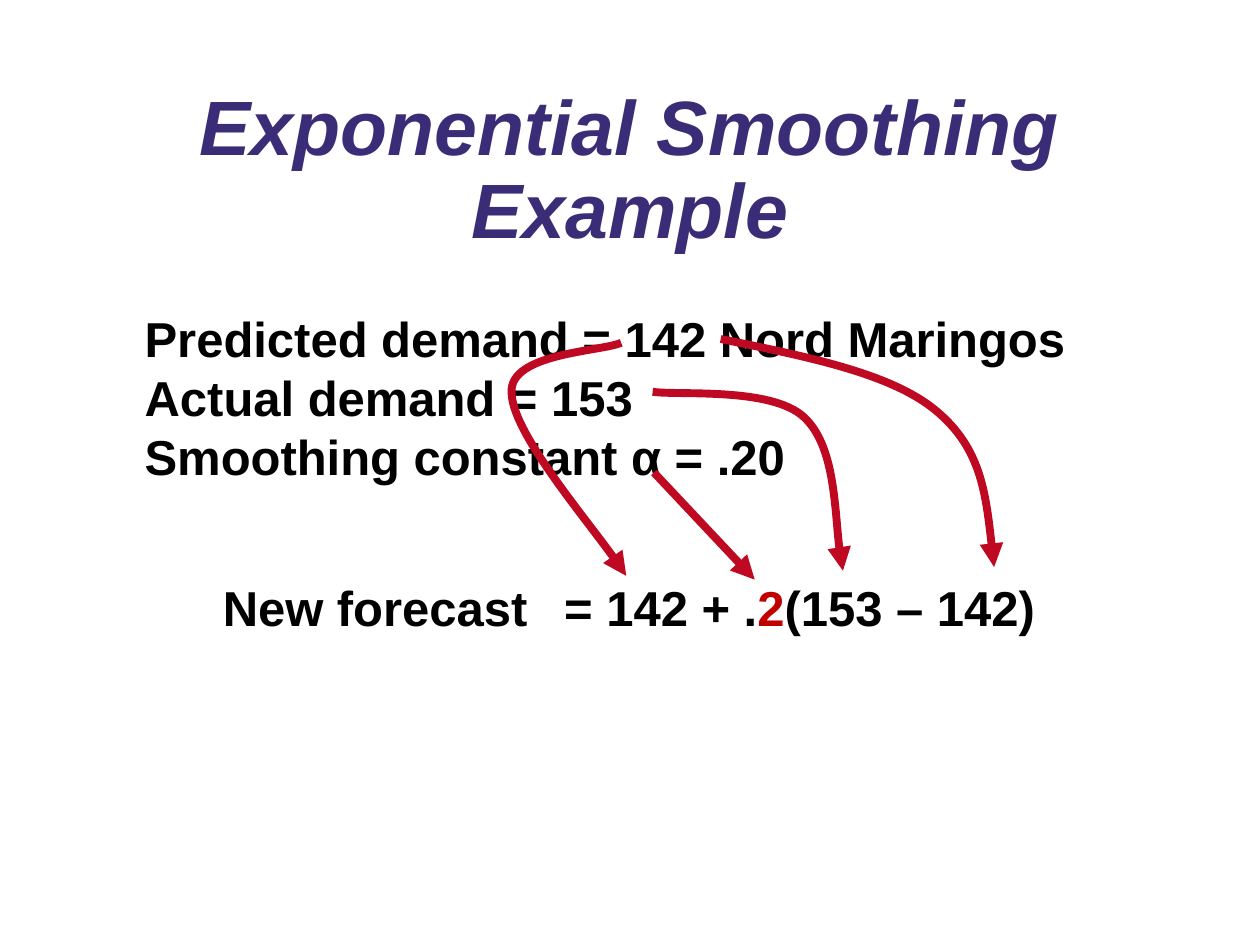
from lxml import etree
from pptx import Presentation
from pptx.dml.color import RGBColor
from pptx.enum import shapes, text
from pptx.oxml import ns
from pptx.util import Inches, Pt

COLORS = {"title": "3A2C76", "body": "000000", "accent": "C00000", "arrow": "BF0922"}


def style_font(font, size, color):
    font.name, font.size, font.bold = "Arial", Pt(size), True
    font.color.rgb = RGBColor.from_string(COLORS[color])


def style_arrow(arrow):
    """Red line with a triangle at its end and no shadow."""
    arrow.line.color.rgb = RGBColor.from_string(COLORS["arrow"])
    arrow.line.width = Pt(4.5)
    properties = arrow._element.spPr
    etree.SubElement(properties.get_or_add_ln(), ns.qn("a:tailEnd"), type="triangle")
    etree.SubElement(properties, ns.qn("a:effectLst"))


deck = Presentation()
deck.slide_width, deck.slide_height = Inches(10), Inches(7.5)
page = deck.slides.add_slide(deck.slide_layouts[5])

title = page.shapes.title
title.left, title.top = Inches(0.75), Inches(0.67)
title.width, title.height = Inches(8.5), Inches(1.39)
title.text_frame.text = "Exponential Smoothing Example"
title.text_frame.vertical_anchor = text.MSO_ANCHOR.MIDDLE
para = title.text_frame.paragraphs[0]
para.alignment = text.PP_ALIGN.CENTER
para.line_spacing = 0.9
style_font(para.font, 44, "title")
para.font.italic = True

# Given values
givens = page.shapes.add_textbox(Inches(1.05), Inches(2.4), Inches(7.57), Inches(1.5))
givens.text_frame.text = (
    "Predicted demand = 142 Nord Maringos\n"
    "Actual demand = 153\n"
    "Smoothing constant α = .20"
)
for para in givens.text_frame.paragraphs:
    style_font(para.font, 28, "body")

# Forecast formula
formula = page.shapes.add_textbox(Inches(1.67), Inches(4.42), Inches(6.66), Inches(1.27))
para = formula.text_frame.paragraphs[0]
para.line_spacing = 1.25
tabs = etree.SubElement(para._p.get_or_add_pPr(), ns.qn("a:tabLst"))
etree.SubElement(tabs, ns.qn("a:tab"), pos=str(Inches(2.71)), algn="l")
for words, color in (
    ("New forecast\t= 142 + .", "body"),
    ("2", "accent"),
    ("(153 – 142)", "body"),
):
    span = para.add_run()
    span.text = words
    style_font(span.font, 28, color)

# Curved arrows: a start point, then three points for each Bezier segment
curves = [
    [(5.72, 2.69), (6.4, 2.83), (7.07, 2.96), (7.43, 3.26),
     (7.79, 3.56), (7.84, 4.03), (7.89, 4.5)],
    [(5.18, 3.11), (5.38, 3.14), (6.12, 3.07), (6.38, 3.31),
     (6.63, 3.54), (6.63, 4.27), (6.69, 4.53)],
    [(4.93, 2.72), (4.78, 2.79), (4.05, 2.8), (4.06, 3.11),
     (4.06, 3.42), (4.78, 4.27), (4.97, 4.57)],
]
for curve_points in curves:
    start, *points = [(Inches(x), Inches(y)) for x, y in curve_points]
    builder = page.shapes.build_freeform(*start)
    builder.add_line_segments(points, close=False)
    curve = builder.convert_to_shape()
    curve.fill.background()
    lines = list(curve._element.iter(ns.qn("a:lnTo")))
    for first in range(0, len(lines), 3):
        bezier = etree.Element(ns.qn("a:cubicBezTo"))
        lines[first].addprevious(bezier)
        for line in lines[first:first + 3]:
            bezier.append(line[0])
            line.getparent().remove(line)
    style_arrow(curve)

alpha_arrow = page.shapes.add_connector(
    shapes.MSO_CONNECTOR.STRAIGHT, Inches(5.19), Inches(3.75), Inches(5.99), Inches(4.6)
)
style_arrow(alpha_arrow)

deck.save("out.pptx")
